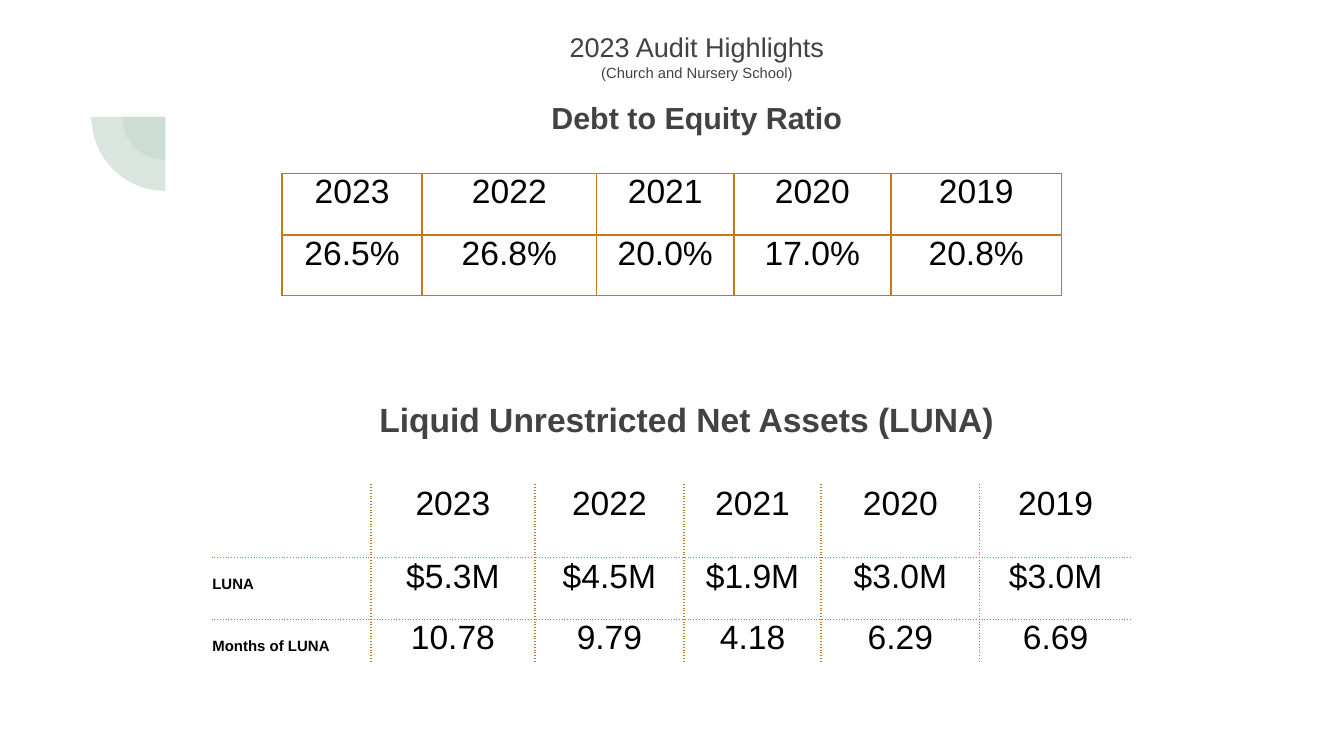
from dataclasses import dataclass
from math import cos, pi, sin

from lxml.etree import SubElement
from pptx import Presentation
from pptx.dml.color import RGBColor
from pptx.enum.text import MSO_ANCHOR, PP_ALIGN
from pptx.oxml.ns import qn
from pptx.util import Inches, Pt


@dataclass(frozen=True)
class Theme:
    font: str = "Arial"
    heading: str = "424242"
    body: str = "000000"
    border: str = "C0791B"
    accent: str = "C9DBD1"
    title_size: float = 14.5
    subtitle_size: float = 7.9
    ratio_size: float = 16.3
    figure_size: float = 18
    label_size: float = 8
    border_width: float = 1


THEME = Theme()

YEARS = ["2023", "2022", "2021", "2020", "2019"]
RATIO_ROWS = [YEARS, ["26.5%", "26.8%", "20.0%", "17.0%", "20.8%"]]
LUNA_ROWS = [
    ["", *YEARS],
    ["LUNA", "$5.3M", "$4.5M", "$1.9M", "$3.0M", "$3.0M"],
    ["Months of LUNA", "10.78", "9.79", "4.18", "6.29", "6.69"],
]


def set_format(target, formats):
    for attribute, value in formats.items():
        setattr(target, attribute, value)


def add_run(paragraph, text, size, color, bold=False):
    run = paragraph.add_run()
    run.text = text
    set_format(run.font, {"name": THEME.font, "size": Pt(size), "bold": bold})
    run.font.color.rgb = RGBColor.from_string(color)


def add_text_frame(slide, left, top, width, height, inset, wrap):
    box = slide.shapes.add_textbox(Inches(left), Inches(top), Inches(width), Inches(height))
    frame = box.text_frame
    margins = {f"margin_{side}": Inches(inset) for side in ("left", "right", "top", "bottom")}
    set_format(frame, {"word_wrap": wrap, "vertical_anchor": MSO_ANCHOR.TOP, **margins})
    return frame


def add_quarter_disc(slide, center_x, center_y, radius, opacity=70, steps=32):
    """Draw the lower left quarter of a disc."""
    angles = [pi / 2 * (1 + step / steps) for step in range(steps + 1)]
    arc = [(Inches(center_x + radius * cos(a)), Inches(center_y + radius * sin(a)))
           for a in angles]
    builder = slide.shapes.build_freeform(Inches(center_x), Inches(center_y))
    builder.add_line_segments(arc, close=True)
    disc = builder.convert_to_shape()
    disc.shadow.inherit = False
    disc.line.fill.background()
    disc.fill.solid()
    disc.fill.fore_color.rgb = RGBColor.from_string(THEME.accent)
    color = disc.fill._xPr.find(qn("a:solidFill")).find(qn("a:srgbClr"))
    SubElement(color, qn("a:alpha"), val=str(opacity * 1000))


def add_border(cell, side, dash):
    line = SubElement(cell._tc.get_or_add_tcPr(), qn(f"a:ln{side}"),
                      w=str(Pt(THEME.border_width)))
    fill = SubElement(line, qn("a:solidFill"))
    SubElement(fill, qn("a:srgbClr"), val=THEME.border)
    SubElement(line, qn("a:prstDash"), val=dash)


def fill_cell(cell, text, is_label):
    set_format(cell, {f"margin_{side}": 0 for side in ("left", "right", "top", "bottom")})
    cell.fill.background()
    paragraph = cell.text_frame.paragraphs[0]
    paragraph.alignment = PP_ALIGN.LEFT if is_label else PP_ALIGN.CENTER
    if not text:
        return
    size = THEME.label_size if is_label else THEME.figure_size
    if is_label:
        # A label sits on the second line of its cell
        paragraph.add_line_break()
        SubElement(paragraph._p[-1], qn("a:rPr"), sz=str(size * 100))
    add_run(paragraph, text, size, THEME.body, bold=is_label)


def add_figures(slide, left, top, widths, heights, rows, dash, framed, labelled=False):
    table = slide.shapes.add_table(
        len(rows), len(widths), Inches(left), Inches(top),
        Inches(sum(widths)), Inches(sum(heights))).table
    set_format(table, {"first_row": False, "horz_banding": False})
    for column, width in zip(table.columns, widths):
        column.width = Inches(width)
    for row, height in zip(table.rows, heights):
        row.height = Inches(height)

    for r, texts in enumerate(rows):
        for c, text in enumerate(texts):
            cell = table.cell(r, c)
            inner = {"L": c > 0, "R": c < len(widths) - 1,
                     "T": r > 0, "B": r < len(rows) - 1}
            for side, is_inner in inner.items():
                if framed or is_inner:
                    add_border(cell, side, dash)
            fill_cell(cell, text, labelled and c == 0)


def add_title(slide):
    frame = add_text_frame(slide, 1.34, 0.13, 7.69, 1.09, inset=0.1, wrap=True)
    title, ratio_heading = frame.paragraphs[0], frame.add_paragraph()
    for paragraph in (title, ratio_heading):
        set_format(paragraph, {"alignment": PP_ALIGN.CENTER, "line_spacing": 1.0})
    add_run(title, "2023 Audit Highlights", THEME.title_size, THEME.heading)
    title.add_line_break()
    add_run(title, "(Church and Nursery School)", THEME.subtitle_size, THEME.heading)
    ratio_heading.space_before = Pt(9.7)
    add_run(ratio_heading, "Debt to Equity Ratio", THEME.ratio_size, THEME.heading, bold=True)


def add_luna_heading(slide):
    frame = add_text_frame(slide, 2.76, 2.92, 4.7, 0.45, inset=0.05, wrap=False)
    heading = frame.paragraphs[0]
    heading.alignment = PP_ALIGN.CENTER
    add_run(heading, "Liquid Unrestricted Net Assets (LUNA)", THEME.figure_size,
            THEME.heading, bold=True)


def main():
    presentation = Presentation()
    # Widescreen, 16 to 9
    set_format(presentation, {"slide_width": Inches(10),
                              "slide_height": Inches(10 * 9 / 16)})
    slide = presentation.slides.add_slide(presentation.slide_layouts[6])

    # Corner ornament
    for radius in (0.32, 0.55):
        add_quarter_disc(slide, 1.23, 0.87, radius)

    # Title and debt to equity ratio
    add_title(slide)
    add_figures(slide, 2.1, 1.29, [1.04, 1.3, 1.02, 1.17, 1.27], [0.46, 0.45],
                RATIO_ROWS, dash="solid", framed=True)

    # Liquid unrestricted net assets
    add_figures(slide, 1.58, 3.61, [1.18, 1.22, 1.11, 1.02, 1.18, 1.13],
                [0.54, 0.46, 0.33], LUNA_ROWS, dash="sysDot", framed=False, labelled=True)
    add_luna_heading(slide)

    presentation.save("out.pptx")


if __name__ == "__main__":
    main()
